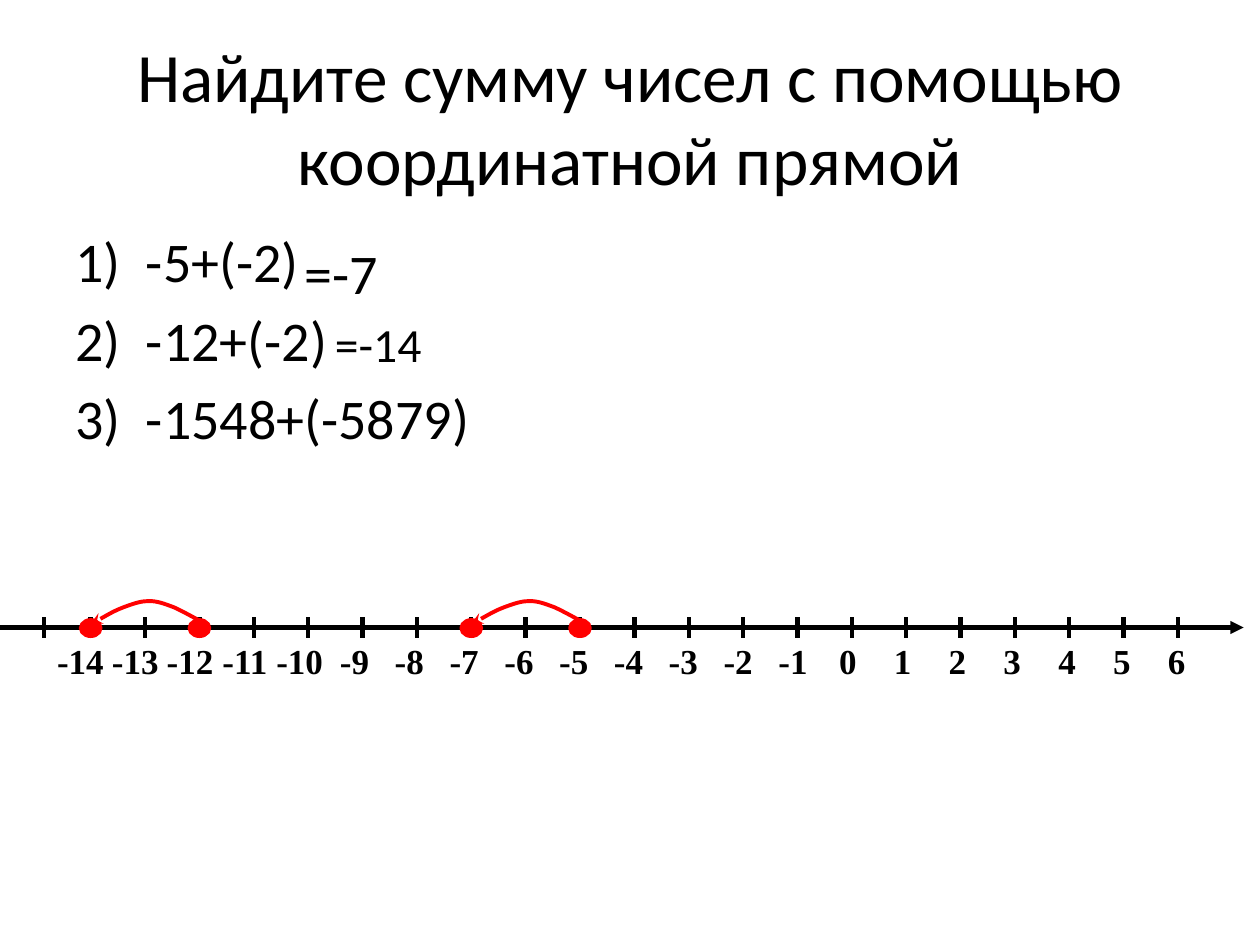
"""Build a slide on adding negative numbers along a number line."""
from lxml import etree
from pptx import Presentation
from pptx import util as u
from pptx.dml.color import RGBColor
from pptx.enum import shapes, text
from pptx.oxml.ns import qn

BLACK = RGBColor(0, 0, 0)
WHITE = RGBColor(255, 255, 255)
RED = RGBColor(255, 0, 0)

deck = Presentation()
deck.slide_width, deck.slide_height = u.Inches(10), u.Inches(7.5)
col, row = deck.slide_width / 100, deck.slide_height / 75
slide = deck.slides.add_slide(deck.slide_layouts[5])
first, last = -14, 6
step = (93.5 - 7.2) / (last - first)
axis_row = 49.8
tick_cols = {n: 7.2 + step * (n - first) for n in range(first, last + 1)}


def box(left, top, width, height):
    return [int(v) for v in (left * col, top * row, width * col, height * row)]


def write(paragraph, words, **formats):
    run = paragraph.add_run()
    run.text = words
    run.font.color.rgb = BLACK
    for key, value in formats.items():
        setattr(run.font, key, value)


title = slide.shapes.title
title.left, title.top, title.width, title.height = box(5, 3, 90, 12.5)
title.text_frame.word_wrap = True
title.text_frame.vertical_anchor = text.MSO_ANCHOR.MIDDLE
heading = title.text_frame.paragraphs[0]
heading.alignment = text.PP_ALIGN.CENTER
write(heading, "Найдите сумму чисел с помощью координатной прямой",
      size=u.Pt(39.6), name="Calibri")

text_blocks = [
    ((5, 17.5, 34, 20.8), ["-5+(-2)", "-12+(-2)", "-1548+(-5879)"], 32, True),
    ((23.2, 18.4, 9.2, 5.9), ["=-7"], 32, False),
    ((25.6, 24.5, 9.2, 5.9), ["=-14"], 27.2, False),
]
for place, sums, size, numbered in text_blocks:
    frame = slide.shapes.add_textbox(*box(*place)).text_frame
    frame.word_wrap = True
    for index, words in enumerate(sums):
        paragraph = frame.add_paragraph() if index else frame.paragraphs[0]
        paragraph.space_before = u.Pt(size * 0.2)
        write(paragraph, words, size=u.Pt(size), name="Calibri")
        if numbered:
            props = paragraph._p.get_or_add_pPr()
            props.set("marL", str(u.Inches(0.56)))
            props.set("indent", str(-u.Inches(0.56)))
            etree.SubElement(props, qn("a:buFont"), typeface="+mj-lt")
            etree.SubElement(props, qn("a:buAutoNum"), type="arabicParenR")

scale = slide.shapes.add_shape(shapes.MSO_SHAPE.RECTANGLE, *box(-0.7, 45.5, 102.8, 10))
scale.shadow.inherit = False
scale.fill.solid()
scale.fill.fore_color.rgb = scale.line.color.rgb = WHITE
scale.line.width = u.Pt(0.75)
scale_format = {"word_wrap": True, "vertical_anchor": text.MSO_ANCHOR.MIDDLE,
                "margin_left": u.Inches(0.1), "margin_right": 0,
                "margin_top": u.Inches(0.43), "margin_bottom": u.Inches(0.05)}
for key, value in scale_format.items():
    setattr(scale.text_frame, key, value)
labels = scale.text_frame.paragraphs[0]
labels.alignment = text.PP_ALIGN.LEFT
write(labels, "".join(f"\t{n}" for n in tick_cols),
      size=u.Pt(20), name="Times New Roman", bold=True)
stops = etree.SubElement(labels._p.get_or_add_pPr(), qn("a:tabLst"))
for index in range(len(tick_cols)):
    etree.SubElement(stops, qn("a:tab"), pos=str(int((6.1 + 4.35 * index) * col)), algn="ctr")

ticks = [(x, axis_row - 0.8, x, axis_row + 0.8) for x in [3.5, *tick_cols.values()]]
for x1, y1, x2, y2 in [(-0.7, axis_row, 98.7, axis_row), *ticks]:
    stroke = slide.shapes.add_connector(shapes.MSO_CONNECTOR.STRAIGHT, *box(x1, y1, x2, y2))
    stroke.line.color.rgb = BLACK
    stroke.line.width = u.Pt(2.5)
    etree.SubElement(stroke._element.spPr, qn("a:effectLst"))
    if y1 == y2:
        etree.SubElement(stroke.line._get_or_add_ln(), qn("a:tailEnd"), type="triangle")

arc = [(9.1, 1.8), (8.7, 1.6), (7.3, 0.8), (6.6, 0.5), (5.8, 0.2), (5.3, 0), (4.6, 0),
       (4, 0), (3.4, 0.2), (2.6, 0.5), (1.8, 0.8), (0.5, 1.6), (0, 1.8)]
for start, end in [(-5, -7), (-12, -14)]:
    for n in (start, end):
        dot = slide.shapes.add_shape(shapes.MSO_SHAPE.OVAL,
                                     *box(tick_cols[n] - 0.8, axis_row - 0.6, 1.6, 1.3))
        dot.shadow.inherit = False
        dot.fill.solid()
        dot.fill.fore_color.rgb = dot.line.color.rgb = RED
        dot.line.width = u.Pt(2)
    points = [(int((tick_cols[end] + x) * col), int((47.7 + y) * row)) for x, y in arc]
    outline = slide.shapes.build_freeform(*points[0])
    outline.add_line_segments(points[1:], close=False)
    jump = outline.convert_to_shape()
    jump.shadow.inherit = False
    jump.fill.background()
    jump.line.color.rgb = RED
    jump.line.width = u.Pt(2.25)
    etree.SubElement(jump.line._get_or_add_ln(), qn("a:tailEnd"), type="stealth")
    segments = list(jump._element.iter(qn("a:lnTo")))
    for index in range(0, len(segments), 3):
        curve = etree.SubElement(segments[index].getparent(), qn("a:cubicBezTo"))
        for segment in segments[index:index + 3]:
            curve.append(segment[0])
            segment.getparent().remove(segment)

deck.save("out.pptx")
